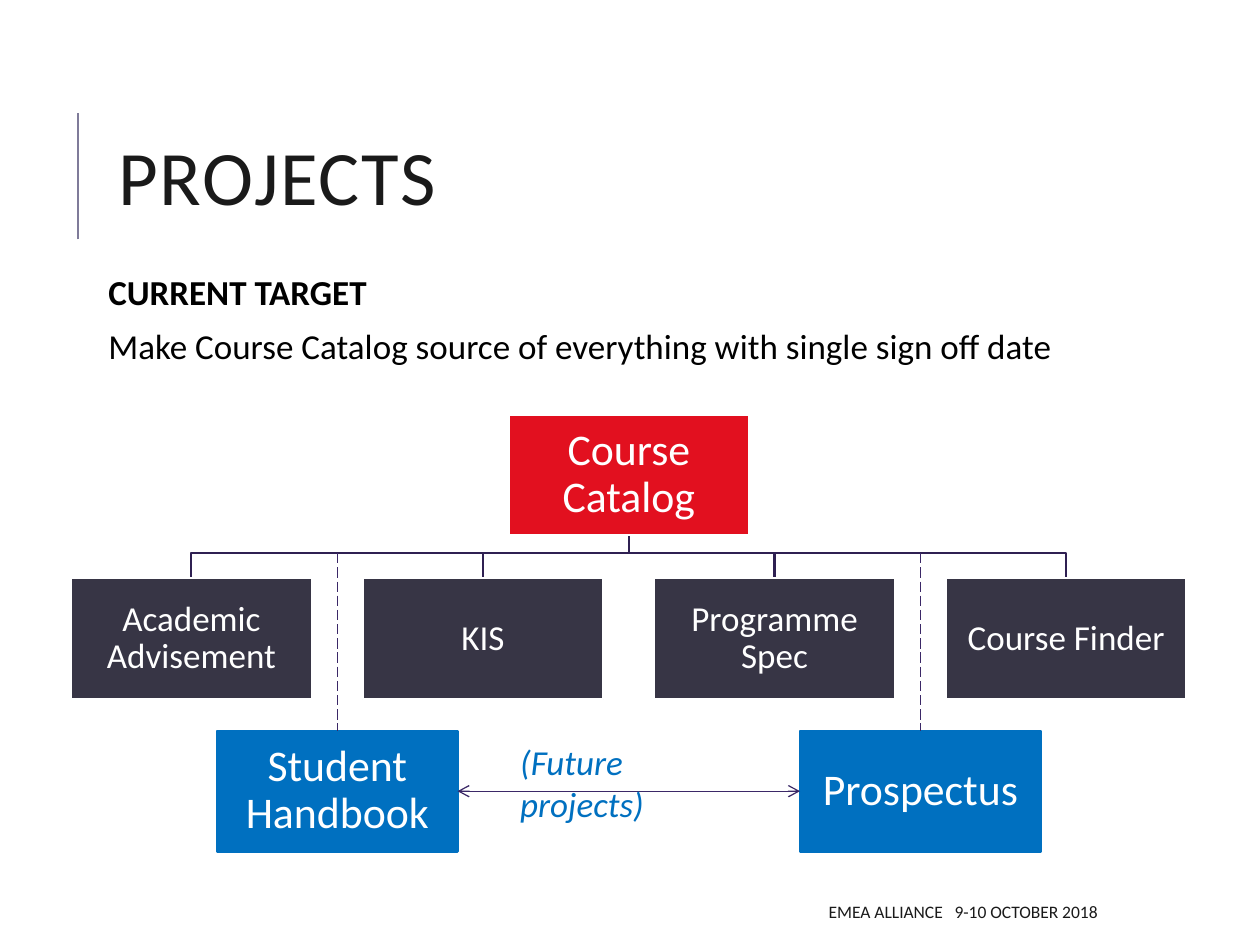
from pptx import Presentation
from pptx.dml.color import RGBColor
from pptx.enum.dml import MSO_LINE
from pptx.enum.shapes import MSO_CONNECTOR, MSO_SHAPE
from pptx.enum.text import MSO_ANCHOR, MSO_AUTO_SIZE, PP_ALIGN
from pptx.oxml.ns import qn
from pptx.util import Pt
from lxml.etree import SubElement

# Content
TITLE = "PROJECTS"
BODY = [("CURRENT TARGET", True),
        ("Make Course Catalog source of everything with single sign off date", False)]
SOURCE = "Course Catalog"
OUTPUTS = ["Academic Advisement", "KIS", "Programme Spec", "Course Finder"]
FUTURE = [("Student Handbook", -1), ("Prospectus", 1)]  # offset in columns
FUTURE_NOTE = "(Future projects)"
FOOTER = ["EMEA ALLIANCE", "9-10 OCTOBER 2018"]

THEME = {
    "font": "Calibri",
    "color": {"title": "1A1A1A", "body": "000000", "light": "FFFFFF", "source": "E2101F",
              "output": "373545", "future": "0070C0", "tree": "2F2052",
              "link": "3B2867", "rule": "7F7B99"},
    "size": {"title": 44, "large": 25, "medium": 20, "footer": 10},
}

# Diagram grid, in points
CENTER, PITCH = 359.3, 166.6
BOX_WIDTH, BOX_HEIGHT = 137.5, 69
SOURCE_TOP, BUS_Y, OUTPUT_TOP, FUTURE_TOP = 236.9, 316.1, 330.5, 417.6


def color(name):
    return RGBColor.from_string(THEME["color"][name])


def set_all(target, values):
    for name, value in values.items():
        setattr(target, name, value)


def set_frame(frame, inset, anchor=MSO_ANCHOR.TOP):
    horizontal, vertical = inset
    set_all(frame, {"word_wrap": True, "auto_size": MSO_AUTO_SIZE.NONE,
                    "vertical_anchor": anchor,
                    "margin_left": Pt(horizontal), "margin_right": Pt(horizontal),
                    "margin_top": Pt(vertical), "margin_bottom": Pt(vertical)})


def add_run(paragraph, text, size, ink, tracking=None, **style):
    run = paragraph.add_run()
    run.text = text
    set_all(run.font, {"name": THEME["font"], "size": Pt(THEME["size"][size]), **style})
    run.font.color.rgb = color(ink)
    if tracking:
        run.font._element.set("spc", str(int(tracking * 100)))


def set_line(line, ink, width):
    line.color.rgb = color(ink)
    line.width = Pt(width)


def add_box(slide, text, center, top, fill, size, border="light", border_width=1.25):
    box = slide.shapes.add_shape(MSO_SHAPE.RECTANGLE, Pt(center - BOX_WIDTH / 2), Pt(top),
                                 Pt(BOX_WIDTH), Pt(BOX_HEIGHT))
    box.shadow.inherit = False
    box.fill.solid()
    box.fill.fore_color.rgb = color(fill)
    set_line(box.line, border, border_width)
    set_frame(box.text_frame, (1, 1), MSO_ANCHOR.MIDDLE)
    paragraph = box.text_frame.paragraphs[0]
    set_all(paragraph, {"alignment": PP_ALIGN.CENTER, "line_spacing": 0.9})
    add_run(paragraph, text, size, "light")
    return box


def add_branch(slide, center):
    builder = slide.shapes.build_freeform(Pt(CENTER), Pt(SOURCE_TOP + BOX_HEIGHT))
    corners = [(CENTER, BUS_Y), (center, BUS_Y), (center, OUTPUT_TOP)]
    builder.add_line_segments([(Pt(x), Pt(y)) for x, y in corners], close=False)
    branch = builder.convert_to_shape()
    branch.shadow.inherit = False
    branch.fill.background()
    set_line(branch.line, "tree", 1.25)


def add_line(slide, start, end, ink, width):
    line = slide.shapes.add_connector(MSO_CONNECTOR.STRAIGHT,
                                      *(Pt(value) for value in start + end))
    set_line(line.line, ink, width)
    SubElement(line._element.spPr, qn("a:effectLst"))
    return line


def add_text_box(slide, left, top, width, height, inset=(7.2, 3.6), anchor=MSO_ANCHOR.TOP):
    box = slide.shapes.add_textbox(Pt(left), Pt(top), Pt(width), Pt(height))
    set_frame(box.text_frame, inset, anchor)
    return box.text_frame


def add_heading(slide):
    add_line(slide, (44.6, 136.8), (44.6, 64.8), "rule", 1.5)
    title = slide.shapes.title
    set_all(title, {"left": Pt(60.5), "top": Pt(46), "width": Pt(574), "height": Pt(118)})
    set_frame(title.text_frame, (7.2, 3.6), MSO_ANCHOR.MIDDLE)
    paragraph = title.text_frame.paragraphs[0]
    set_all(paragraph, {"alignment": PP_ALIGN.LEFT, "line_spacing": 0.8})
    add_run(paragraph, TITLE, "title", "title", tracking=1)

    frame = add_text_box(slide, 58.3, 157.7, 574, 48, inset=(3.6, 3.6))
    for index, (text, bold) in enumerate(BODY):
        paragraph = frame.add_paragraph() if index else frame.paragraphs[0]
        set_all(paragraph, {"line_spacing": 0.7, "space_before": Pt(14)})
        add_run(paragraph, text, "medium", "body", bold=bold)


def add_diagram(slide):
    # Current target: one source feeding a row of outputs
    first = CENTER - PITCH * (len(OUTPUTS) - 1) / 2
    centers = [first + PITCH * index for index in range(len(OUTPUTS))]
    for center in centers:
        add_branch(slide, center)
    add_box(slide, SOURCE, CENTER, SOURCE_TOP, "source", "large")
    for text, center in zip(OUTPUTS, centers):
        add_box(slide, text, center, OUTPUT_TOP, "output", "medium")

    # Future projects: dashed drops from the bus
    future_boxes = []
    for text, offset in FUTURE:
        center = CENTER + PITCH * offset
        box = add_box(slide, text, center, FUTURE_TOP, "future", "large", "future")
        drop = add_line(slide, (center, BUS_Y), (center, FUTURE_TOP), "link", 0.75)
        drop.line.dash_style = MSO_LINE.LONG_DASH
        drop.end_connect(box, 0)
        future_boxes.append(box)

    # Two-way link between the future projects
    link = add_line(slide, (0, 0), (0, 0), "link", 0.75)
    link.begin_connect(future_boxes[0], 3)
    link.end_connect(future_boxes[1], 1)
    for end in ("a:headEnd", "a:tailEnd"):
        SubElement(link.line._get_or_add_ln(), qn(end), type="arrow")
    note = add_text_box(slide, 290.2, 419.8, 141, 32)
    add_run(note.paragraphs[0], FUTURE_NOTE, "medium", "future", italic=True)


def add_footer(slide):
    frame = add_text_box(slide, 285.8, 509.8, 348.5, 21.6, anchor=MSO_ANCHOR.MIDDLE)
    paragraph = frame.paragraphs[0]
    paragraph.alignment = PP_ALIGN.RIGHT
    event, date = FOOTER
    add_run(paragraph, event, "footer", "title")
    add_run(paragraph, " ", "footer", "title", tracking=4.5)
    add_run(paragraph, date, "footer", "title")


def main():
    presentation = Presentation()
    set_all(presentation, {"slide_width": Pt(720), "slide_height": Pt(540)})
    slide = presentation.slides.add_slide(presentation.slide_layouts[5])
    add_heading(slide)
    add_diagram(slide)
    add_footer(slide)
    presentation.save("out.pptx")


if __name__ == "__main__":
    main()
